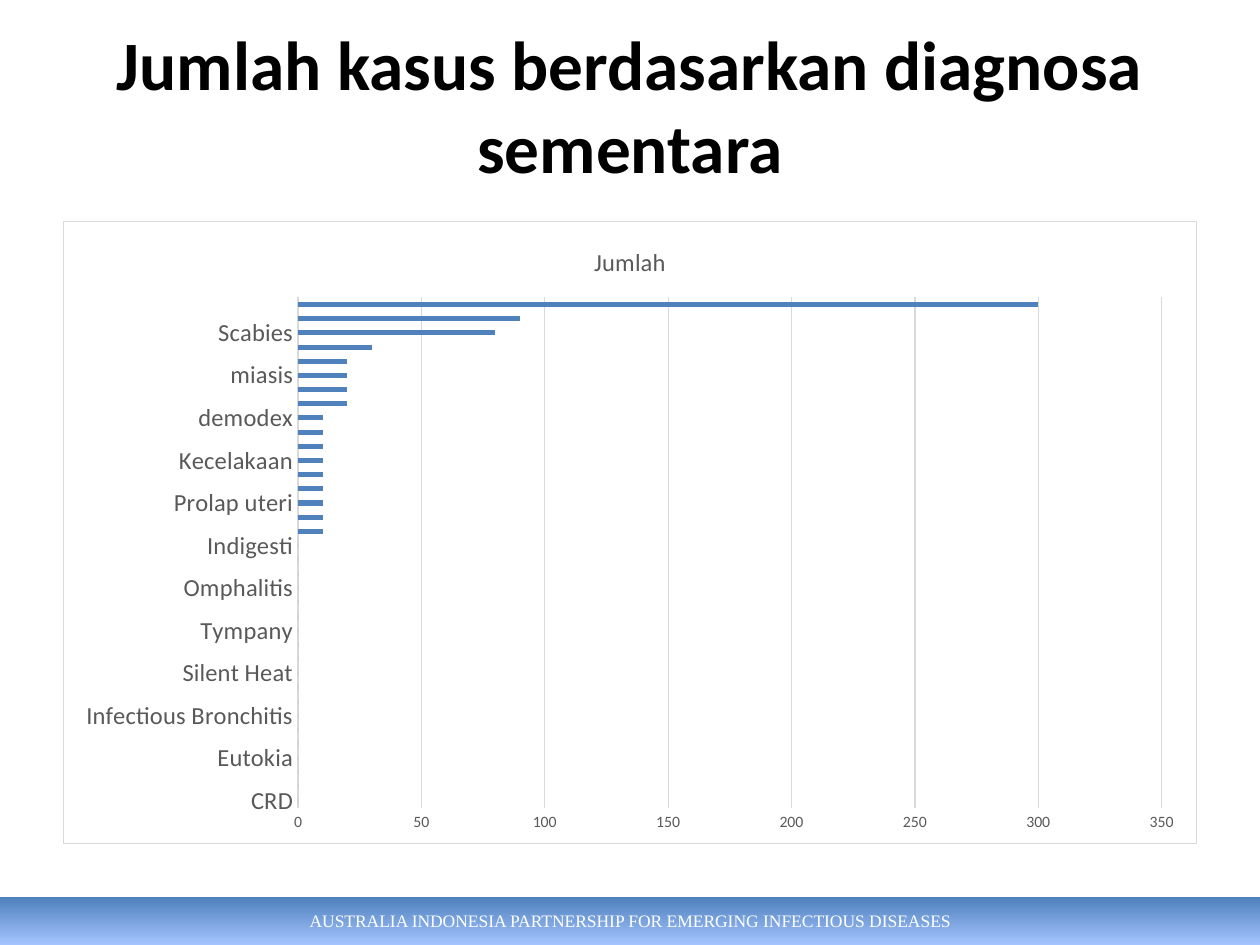
import pptx
import pptx.chart.data
import pptx.dml.color
import pptx.enum.chart
import pptx.enum.shapes
import pptx.enum.text
import pptx.oxml
import pptx.oxml.ns
import pptx.util

Inches = pptx.util.Inches
Pt = pptx.util.Pt

GREY_LINE = "D9D9D9"
GREY_TEXT = "595959"
BLUE = "4F81BD"

CASES = [
    ("CRD", 0), ("Dermatophilosis", 0), ("Endometritis", 0), ("Eutokia", 0),
    ("Footrot", 0), ("Hipofungsi ovari", 0), ("Infectious Bronchitis", 0),
    ("Pruritus", 0), ("Salmonellosis", 0), ("Silent Heat", 0),
    ("Newcastle Disease", 0), ("Papilloma", 0), ("Tympany", 0),
    ("Dermatitis", 0), ("Hernia", 0), ("Omphalitis", 0), ("radang mata", 0),
    ("Malnutrisi", 0), ("Indigesti", 0), ("Colibacillosis", 10),
    ("Distokia", 10), ("Prolap uteri", 10), ("Prolap vagina", 10),
    ("Bovine Viral Diarrhea", 10), ("Kecelakaan", 10), ("Pneumonia", 10),
    ("Mastitis", 10), ("demodex", 10), ("Retensio Secundinarum", 20),
    ("Kekurangan Calsium", 20), ("miasis", 20), ("Tidak sakit", 20),
    ("Transmissible gastro enteritis", 30), ("Scabies", 80),
    ("Cacingan", 90), ("Bovine Ephemeral Fever", 300),
]


def color(value):
    return pptx.dml.color.RGBColor.from_string(value)


def style_font(font, name, size, value, bold=False):
    font.name = name
    font.size = Pt(size)
    font.bold = bold
    font.color.rgb = color(value)


def style_line(line, value):
    line.color.rgb = color(value)
    line.width = Pt(0.75)


def write_centered(text_frame, text, name, size, value, bold=False):
    text_frame.word_wrap = True
    text_frame.vertical_anchor = pptx.enum.text.MSO_ANCHOR.MIDDLE
    paragraph = text_frame.paragraphs[0]
    paragraph.alignment = pptx.enum.text.PP_ALIGN.CENTER
    run = paragraph.add_run()
    run.text = text
    style_font(run.font, name, size, value, bold)


def add_footer(slide, text):
    shape = slide.shapes.add_shape(
        pptx.enum.shapes.MSO_SHAPE.RECTANGLE,
        Inches(0), Inches(7.12), Inches(10), Inches(0.38))
    shape.shadow.inherit = False
    shape.line.fill.background()
    shape.fill.gradient()
    shape.fill.gradient_angle = 270
    for stop, value in zip(shape.fill.gradient_stops, (BLUE, "A4C4FF")):
        stop.color.rgb = color(value)
    shape.text_frame.margin_bottom = Inches(0.06)
    write_centered(shape.text_frame, text, "Times New Roman", 10, "FFFFFF")


def add_title(slide, text):
    shape = slide.shapes.add_textbox(
        Inches(0.5), Inches(0.3), Inches(9), Inches(1.72))
    shape.text_frame.margin_bottom = Inches(0.71)
    write_centered(shape.text_frame, text, "Calibri", 39.6, "000000", True)


def frame_chart(chart, fill, border):
    area = pptx.oxml.parse_xml(
        f'<c:spPr {pptx.oxml.ns.nsdecls("c", "a")}>'
        f'<a:solidFill><a:srgbClr val="{fill}"/></a:solidFill>'
        f'<a:ln w="{Pt(0.75)}"><a:solidFill><a:srgbClr val="{border}"/>'
        '</a:solidFill></a:ln></c:spPr>')
    chart.element.find(pptx.oxml.ns.qn("c:chart")).addnext(area)


def style_axis(axis, size):
    axis.major_tick_mark = pptx.enum.chart.XL_TICK_MARK.NONE
    axis.minor_tick_mark = pptx.enum.chart.XL_TICK_MARK.NONE
    style_font(axis.tick_labels.font, "Calibri", size, GREY_TEXT)


def add_bar_chart(slide, name, cases):
    data = pptx.chart.data.CategoryChartData()
    data.categories = [diagnosis for diagnosis, count in cases]
    data.add_series(name, [count for diagnosis, count in cases])
    chart = slide.shapes.add_chart(
        pptx.enum.chart.XL_CHART_TYPE.BAR_CLUSTERED,
        Inches(0.5), Inches(1.75), Inches(9), Inches(4.95), data).chart
    style_font(chart.font, "Calibri", 10, "000000")
    frame_chart(chart, "FFFFFF", GREY_LINE)
    chart.has_legend = False

    chart.has_title = True
    run = chart.chart_title.text_frame.paragraphs[0].add_run()
    run.text = name
    style_font(run.font, "Calibri", 14, GREY_TEXT)
    chart.chart_title.include_in_layout = False

    plot = chart.plots[0]
    plot.gap_width = 182
    plot.vary_by_categories = False
    bars = plot.series[0].format.fill
    bars.solid()
    bars.fore_color.rgb = color(BLUE)

    style_axis(chart.category_axis, 14)
    style_line(chart.category_axis.format.line, GREY_LINE)
    style_axis(chart.value_axis, 9)
    chart.value_axis.minimum_scale = 0
    chart.value_axis.maximum_scale = 350
    chart.value_axis.major_unit = 50
    chart.value_axis.format.line.fill.background()
    chart.value_axis.has_major_gridlines = True
    style_line(chart.value_axis.major_gridlines.format.line, GREY_LINE)


def main():
    presentation = pptx.Presentation()
    presentation.slide_width = Inches(10)
    presentation.slide_height = Inches(7.5)
    slide = presentation.slides.add_slide(presentation.slide_layouts[6])
    add_footer(
        slide,
        "AUSTRALIA INDONESIA PARTNERSHIP FOR EMERGING INFECTIOUS DISEASES")
    add_title(slide, "Jumlah kasus berdasarkan diagnosa sementara")
    add_bar_chart(slide, "Jumlah", CASES)
    presentation.save("out.pptx")


if __name__ == "__main__":
    main()
